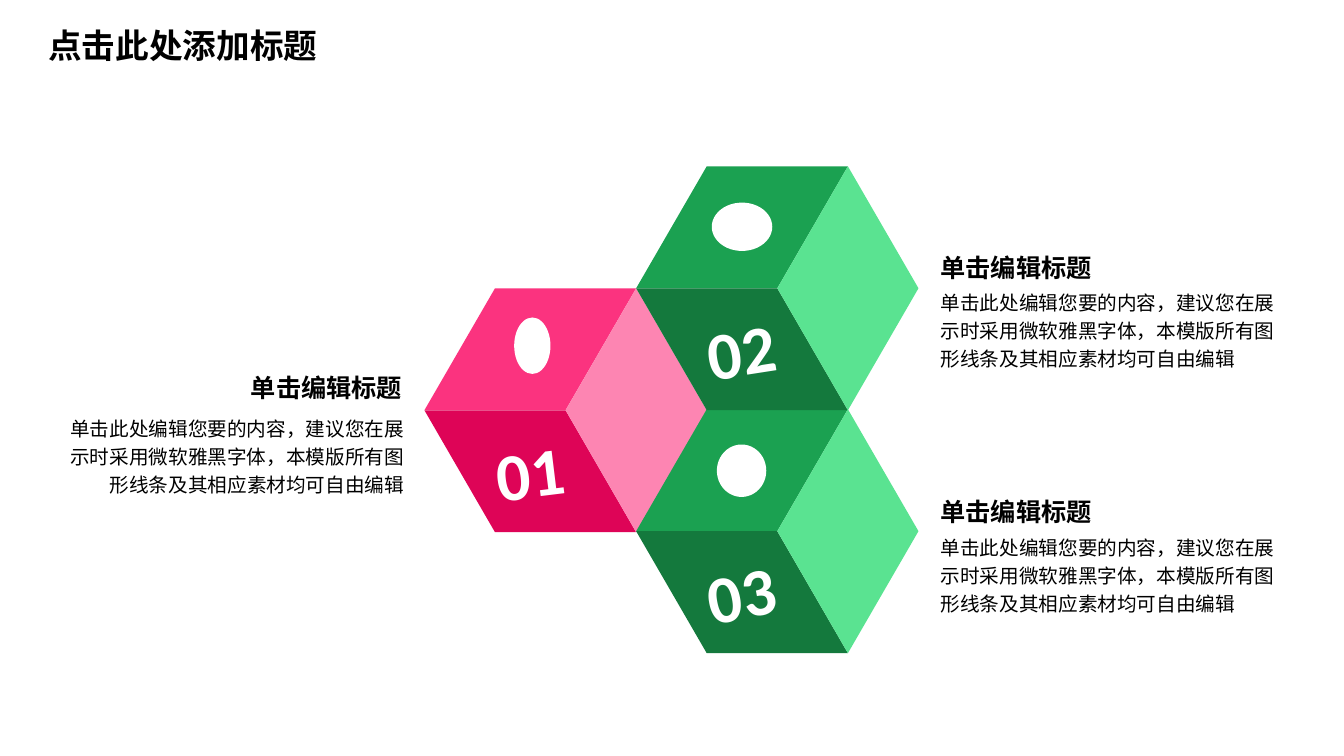
import dataclasses

import pptx
import pptx.dml.color
import pptx.enum.shapes
import pptx.enum.text
import pptx.oxml
import pptx.oxml.ns
import pptx.util

Inches = pptx.util.Inches
Align = pptx.enum.text.PP_ALIGN
Anchor = pptx.enum.text.MSO_ANCHOR


@dataclasses.dataclass(frozen=True)
class Theme:
    cjk_font: str = "Noto Sans CJK SC"
    number_font: str = "Calibri"
    title_size: int = 24
    heading_size: int = 18
    body_size: int = 14
    number_size: int = 48
    ink: str = "000000"
    white: str = "FFFFFF"
    # Top, front and side of a cube
    pink: tuple = ("FB337F", "DE0457", "FD85B2")
    green: tuple = ("1BA151", "14793D", "5AE391")


theme = Theme()


def paint(shape, color):
    shape.fill.solid()
    shape.fill.fore_color.rgb = pptx.dml.color.RGBColor.from_string(color)
    shape.line.fill.background()
    shape.shadow.inherit = False


def write(box, text, size, color=theme.ink, font=theme.cjk_font, bold=True,
          align=Align.LEFT, anchor=Anchor.TOP, spacing=1.0):
    """Format the box and fill it with one run, in Latin and East Asian font alike."""
    frame = box.text_frame
    frame.word_wrap = True
    frame.auto_size = pptx.enum.text.MSO_AUTO_SIZE.SHAPE_TO_FIT_TEXT
    frame.vertical_anchor = anchor
    para = frame.paragraphs[0]
    para.alignment = align
    para.line_spacing = spacing
    span = para.add_run()
    span.text = text
    span.font.name = font
    span.font.size = pptx.util.Pt(size)
    span.font.bold = bold
    span.font.color.rgb = pptx.dml.color.RGBColor.from_string(color)
    east_asian = pptx.oxml.parse_xml(
        f'<a:ea {pptx.oxml.ns.nsdecls("a")} typeface="{font}"/>')
    span.font._element.find(pptx.oxml.ns.qn("a:latin")).addnext(east_asian)


deck = pptx.Presentation()
deck.slide_width = Inches(13.33)
deck.slide_height = Inches(7.5)
slide = deck.slides.add_slide(deck.slide_layouts[5])
shapes = slide.shapes

title = shapes.title
title.left, title.top = Inches(0.38), Inches(0.2)
title.width, title.height = Inches(3.78), Inches(0.5)
write(title, "点击此处添加标题", theme.title_size)

# Cubes: each corner is counted in half edges across and face heights down
half_edge, face_height = 0.7, 1.21
faces = [
    [(1, 0), (3, 0), (2, 1), (0, 1)],
    [(0, 1), (2, 1), (3, 2), (1, 2)],
    [(3, 0), (4, 1), (3, 2), (2, 1)],
]
cubes = [(4.21, 2.86, theme.pink), (6.31, 4.06, theme.green), (6.31, 1.65, theme.green)]
for left, top, colors in cubes:
    for face, color in zip(faces, colors):
        corners = [(Inches(left + half_edge * across), Inches(top + face_height * down))
                   for across, down in face]
        builder = shapes.build_freeform(*corners[0], scale=1.0)
        builder.add_line_segments(corners[1:], close=True)
        paint(builder.convert_to_shape(), color)

# One plain badge on the top face of each cube
for left, top, width, height in [(5.1, 3.15, 0.36, 0.56), (7.06, 2.01, 0.6, 0.48),
                                 (7.11, 4.41, 0.49, 0.52)]:
    badge = shapes.add_shape(pptx.enum.shapes.MSO_SHAPE.OVAL, Inches(left), Inches(top),
                             Inches(width), Inches(height))
    paint(badge, theme.white)

numbers = [("01", 4.84, 4.27, -7), ("02", 6.93, 3.06, -8.8), ("03", 6.93, 5.47, -10.9)]
for number, left, top, turn in numbers:
    box = shapes.add_textbox(Inches(left), Inches(top), Inches(0.84), Inches(0.81))
    box.rotation = turn
    frame = box.text_frame
    frame.margin_left = frame.margin_right = frame.margin_top = frame.margin_bottom = 0
    write(box, number, theme.number_size, theme.white, theme.number_font,
          align=Align.CENTER, anchor=Anchor.MIDDLE)

heading = "单击编辑标题"
body = ("单击此处编辑您要的内容，建议您在展示时采用微软雅黑字体，"
        "本模版所有图形线条及其相应素材均可自由编辑")
# Heading left and top, then body left, top and alignment
captions = [
    (9.23, 2.45, 9.23, 2.79, Align.LEFT),
    (9.23, 4.87, 9.23, 5.22, Align.LEFT),
    (2.39, 3.64, 0.5, 4.04, Align.RIGHT),
]
for heading_left, heading_top, body_left, body_top, align in captions:
    box = shapes.add_textbox(Inches(body_left), Inches(body_top), Inches(3.61), Inches(0.95))
    write(box, body, theme.body_size, bold=False, align=align, spacing=1.2)
    box = shapes.add_textbox(Inches(heading_left), Inches(heading_top), Inches(1.72), Inches(0.4))
    write(box, heading, theme.heading_size)

deck.save("out.pptx")
